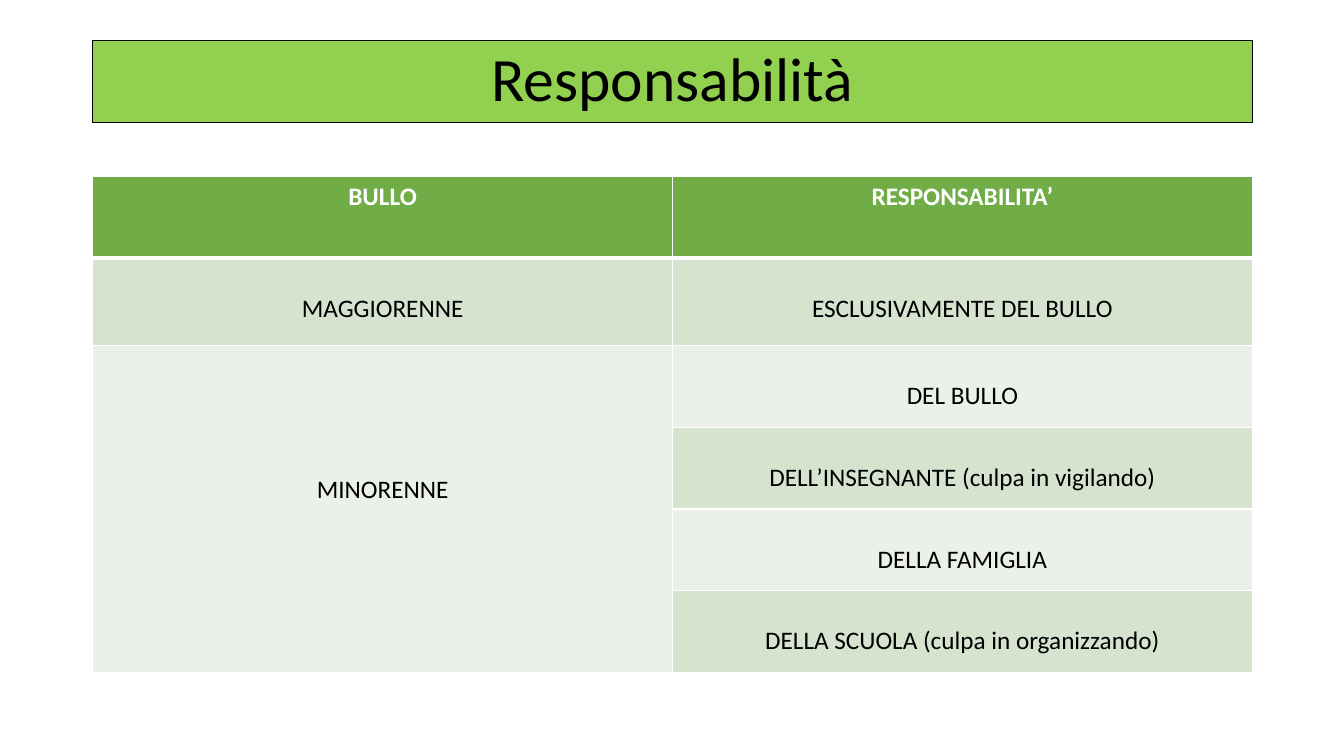
from lxml import etree
from pptx import Presentation
from pptx.dml.color import RGBColor
from pptx.enum.text import MSO_ANCHOR, PP_ALIGN
from pptx.oxml.ns import qn
from pptx.util import Inches, Pt

CENTER = PP_ALIGN.CENTER
TOP, MIDDLE = MSO_ANCHOR.TOP, MSO_ANCHOR.MIDDLE

HEADER = ["BULLO", "RESPONSABILITA’"]
BODY = [
    ["MAGGIORENNE", "ESCLUSIVAMENTE DEL BULLO"],
    ["MINORENNE", "DEL BULLO"],
    ["", "DELL’INSEGNANTE (culpa in vigilando)"],
    ["", "DELLA FAMIGLIA"],
    ["", "DELLA SCUOLA (culpa in organizzando)"],
]
ROW_HEIGHTS = [0.81, 0.87, 0.81, 0.81, 0.81, 0.81]
HEADER_FILL = "70AD47"
BANDS = ["D5E3CF", "EBF1E9"]


def rgb(value):
    return RGBColor.from_string(value)


def write(tf, text, size, color, bold=False):
    p = tf.paragraphs[0]
    p.alignment = CENTER
    r = p.add_run()
    r.text = text
    r.font.color.rgb = rgb(color)
    for name, value in {"name": "Calibri", "size": Pt(size), "bold": bold}.items():
        setattr(r.font, name, value)
    return p


def set_borders(cell, widths, color="FFFFFF"):
    """Draw cell borders; they precede the fill in the cell properties."""
    tcPr = cell._tc.get_or_add_tcPr()
    for i, (side, width) in enumerate(widths.items()):
        ln = etree.Element(qn(f"a:ln{side}"), w=str(Pt(width)))
        fill = etree.SubElement(ln, qn("a:solidFill"))
        etree.SubElement(fill, qn("a:srgbClr"), val=color)
        tcPr.insert(i, ln)


def add_title(s, x, y, w, h):
    title = s.shapes.title
    box = {"left": x, "top": y, "width": w, "height": h}
    for name, value in box.items():
        setattr(title, name, Inches(value))
    title.fill.solid()
    title.fill.fore_color.rgb = rgb("92D050")
    title.line.color.rgb = rgb("000000")
    title.line.width = Pt(0.75)
    title.text_frame.vertical_anchor = MIDDLE
    write(title.text_frame, "Responsabilità", 44, "000000").line_spacing = 0.9


def add_liability_table(s, x, y, w):
    rows = [HEADER] + BODY
    table = s.shapes.add_table(len(rows), len(HEADER), Inches(x), Inches(y),
                               Inches(w), Inches(sum(ROW_HEIGHTS))).table
    for col in table.columns:
        col.width = Inches(w / len(HEADER))
    for i, (texts, height) in enumerate(zip(rows, ROW_HEIGHTS)):
        table.rows[i].height = Inches(height)
        is_header = i == 0
        for j, text in enumerate(texts):
            cell = table.cell(i, j)
            cell.fill.solid()
            cell.fill.fore_color.rgb = rgb(HEADER_FILL if is_header else BANDS[(i - 1) % 2])
            set_borders(cell, {"L": 1, "R": 1, "T": 3 if i == 1 else 1,
                               "B": 3 if is_header else 1})
            cell.vertical_anchor = TOP
            cell.margin_top = Inches(0.05 if is_header else 0.35)
            if text:
                write(cell.text_frame, text, 18, "FFFFFF" if is_header else "000000", is_header)

    # Minor: one cell beside all four liable parties, text just above the middle
    minor = table.cell(2, 0)
    minor.merge(table.cell(len(rows) - 1, 0))
    minor.vertical_anchor = MIDDLE
    minor.margin_top, minor.margin_bottom = Inches(0.05), Inches(0.43)


def main():
    prs = Presentation()
    prs.slide_width, prs.slide_height = Inches(13.33), Inches(7.5)
    s = prs.slides.add_slide(prs.slide_layouts[5])
    add_title(s, 0.92, 0.4, 11.5, 0.82)
    add_liability_table(s, 0.92, 1.75, 11.5)
    prs.save("out.pptx")


if __name__ == "__main__":
    main()
